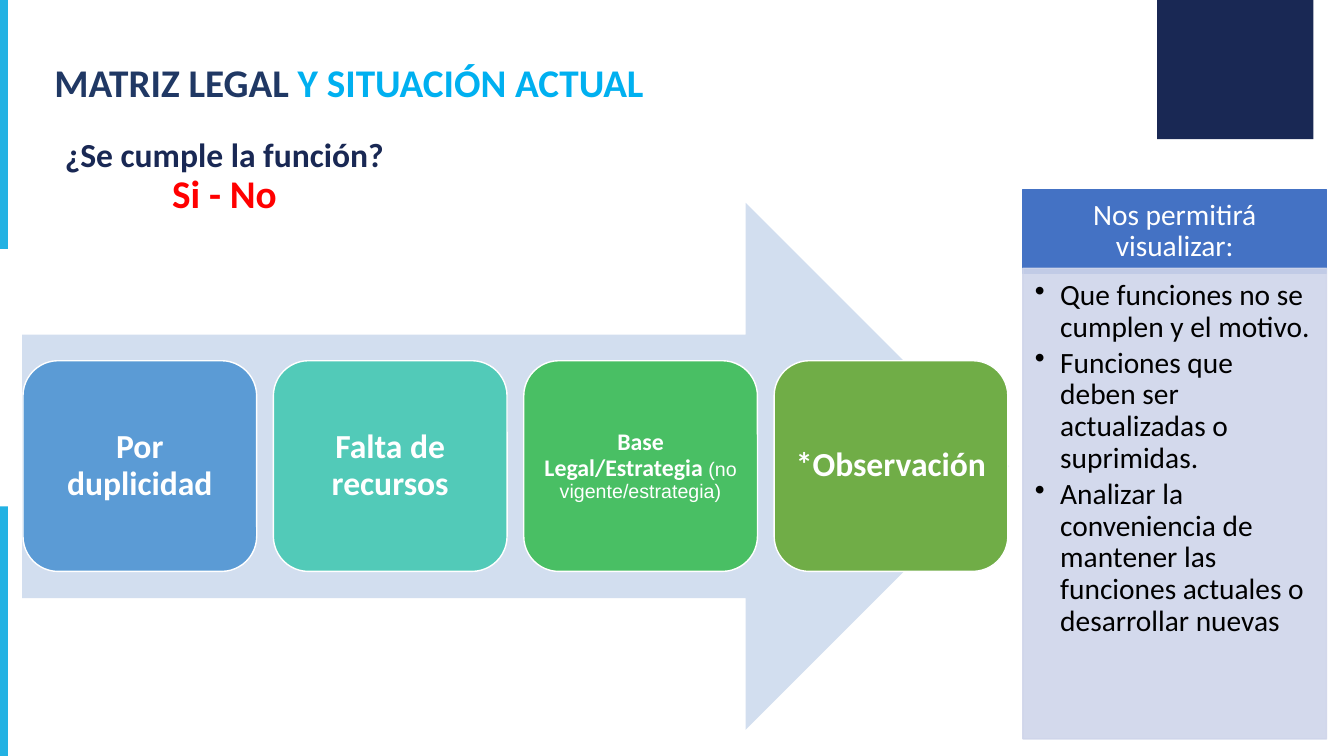
"""Build the slide on the legal matrix and current situation."""
import pptx
import pptx.util
import pptx.dml.color
import pptx.enum.shapes
import pptx.enum.text
import pptx.oxml.ns
from lxml import etree

Cm, Pt = pptx.util.Cm, pptx.util.Pt
SHAPE = pptx.enum.shapes.MSO_SHAPE
ANCHOR = pptx.enum.text.MSO_ANCHOR
ALIGN = pptx.enum.text.PP_ALIGN
qn = pptx.oxml.ns.qn

COLORS = {
    "navy": "192854", "title": "203864", "sky": "00B0F0", "cyan": "23B2E3",
    "red": "FF0000", "white": "FFFFFF", "black": "000000", "arrow": "D2DEEF",
    "blue": "5B9BD5", "teal": "52CAB8", "green": "49BF64", "olive": "70AD47",
    "header": "4472C4", "panel": "CFD5EA",
}

# A run is (text, size, color, bold, font).
TITLE = [[("MATRIZ LEGAL", 28, "title", True, "Calibri"),
          (" Y SITUACIÓN ACTUAL", 28, "sky", True, "Calibri")]]
QUESTION = [[("¿Se cumple la función?", 24, "navy", True, "Calibri")],
            [("Si - No", 28, "red", True, "Calibri")]]
REASONS = [
    ("blue", 0.25, [("Por duplicidad", 24, "white", True, "Calibri")]),
    ("teal", 0.25, [("Falta de recursos", 24, "white", True, "Calibri")]),
    ("green", 0.18, [("Base Legal/Estrategia ", 17, "white", True, "Calibri"),
                     ("(no vigente/estrategia)", 14, "white", False, "Arial")]),
    ("olive", 0.25, [("*Observación", 24, "white", True, "Calibri")]),
]
BENEFITS_HEADING = [[("Nos permitirá visualizar:", 21, "white", False, "Calibri")]]
BENEFITS = [[(text, 21, "black", False, "Calibri")] for text in (
    "Que funciones no se cumplen y el motivo.",
    "Funciones que deben ser actualizadas o suprimidas.",
    "Analizar la conveniencia de mantener las funciones actuales o desarrollar nuevas",
)]
BAR_COLORS = ["cyan", "white", "cyan"]

BAR_HEIGHT = 6.48
CARD_LEFT, CARD_TOP, CARD_WIDTH, CARD_HEIGHT, CARD_STEP = 0.58, 9.09, 5.89, 5.31, 6.31
PANEL_LEFT, PANEL_WIDTH = 25.78, 7.65


def rgb(color):
    return pptx.dml.color.RGBColor.from_string(COLORS[color])


def style_font(font, size, color, bold, name):
    font.size, font.bold, font.name = Pt(size), bold, name
    font.color.rgb = rgb(color)


def write(box, paragraphs, align, insets=(0.25, 0.13, 0.25, 0.13), anchor=ANCHOR.MIDDLE):
    frame = box.text_frame
    frame.word_wrap = True
    frame.vertical_anchor = anchor
    (frame.margin_left, frame.margin_top,
     frame.margin_right, frame.margin_bottom) = [Cm(inset) for inset in insets]
    for index, runs in enumerate(paragraphs):
        paragraph = frame.paragraphs[0] if index == 0 else frame.add_paragraph()
        paragraph.alignment = align
        paragraph.line_spacing = 0.9
        if len(runs) == 1:
            style_font(paragraph.font, *runs[0][1:])
        for text, *style in runs:
            run = paragraph.add_run()
            run.text = text
            if len(runs) > 1:
                style_font(run.font, *style)


def add_text(slide, area, paragraphs, align):
    write(slide.shapes.add_textbox(*map(Cm, area)), paragraphs, align)


def add_block(slide, kind, area, fill, line=None):
    block = slide.shapes.add_shape(kind, *map(Cm, area))
    block.shadow.inherit = False
    block.fill.solid()
    block.fill.fore_color.rgb = rgb(fill)
    if line:
        block.line.color.rgb = rgb(line)
        block.line.width = Pt(1)
    else:
        block.line.fill.background()
    return block


def set_opacity(block, percent):
    for color in block.element.spPr.iter(qn("a:srgbClr")):
        etree.SubElement(color, qn("a:alpha"), val=str(percent * 1000))


def add_bullets(box):
    for paragraph in box.text_frame.paragraphs:
        paragraph.space_after = Pt(3)
        properties = paragraph._p.get_or_add_pPr()
        properties.set("marL", str(Cm(0.64)))
        properties.set("indent", str(Cm(-0.64)))
        bullet = etree.Element(qn("a:buChar"), char="•")
        properties.find(qn("a:spcAft")).addnext(bullet)


def main():
    deck = pptx.Presentation()
    deck.slide_width, deck.slide_height = Cm(33.87), Cm(19.05)
    slide = deck.slides.add_slide(deck.slide_layouts[6])

    add_text(slide, (1.12, 1.22, 21.97, 1.83), TITLE, ALIGN.LEFT)
    add_block(slide, SHAPE.RECTANGLE, (29.16, -0.76, 3.94, 4.27), "navy")
    for index, color in enumerate(BAR_COLORS):
        top = -0.2 + index * BAR_HEIGHT
        add_block(slide, SHAPE.RECTANGLE, (-0.1, top, 0.3, BAR_HEIGHT), color)
    add_text(slide, (-0.81, 3.56, 12.93, 1.83), QUESTION, ALIGN.CENTER)

    add_block(slide, SHAPE.RIGHT_ARROW, (0.56, 5.11, 24.87, 13.28), "arrow")
    for index, (color, inset, reason) in enumerate(REASONS):
        area = (CARD_LEFT + index * CARD_STEP, CARD_TOP, CARD_WIDTH, CARD_HEIGHT)
        card = add_block(slide, SHAPE.ROUNDED_RECTANGLE, area, color, "white")
        write(card, [reason], ALIGN.CENTER, [inset] * 4)

    heading = add_block(slide, SHAPE.RECTANGLE,
                        (PANEL_LEFT, 4.78, PANEL_WIDTH, 2.11), "header", "header")
    write(heading, BENEFITS_HEADING, ALIGN.CENTER, (0.41, 0.23, 0.41, 0.23))
    panel = add_block(slide, SHAPE.RECTANGLE,
                      (PANEL_LEFT, 6.76, PANEL_WIDTH, 11.86), "panel", "panel")
    set_opacity(panel, 90)
    write(panel, BENEFITS, ALIGN.LEFT, (0.3, 0.3, 0.41, 0.46), ANCHOR.TOP)
    add_bullets(panel)

    deck.save("out.pptx")


if __name__ == "__main__":
    main()
